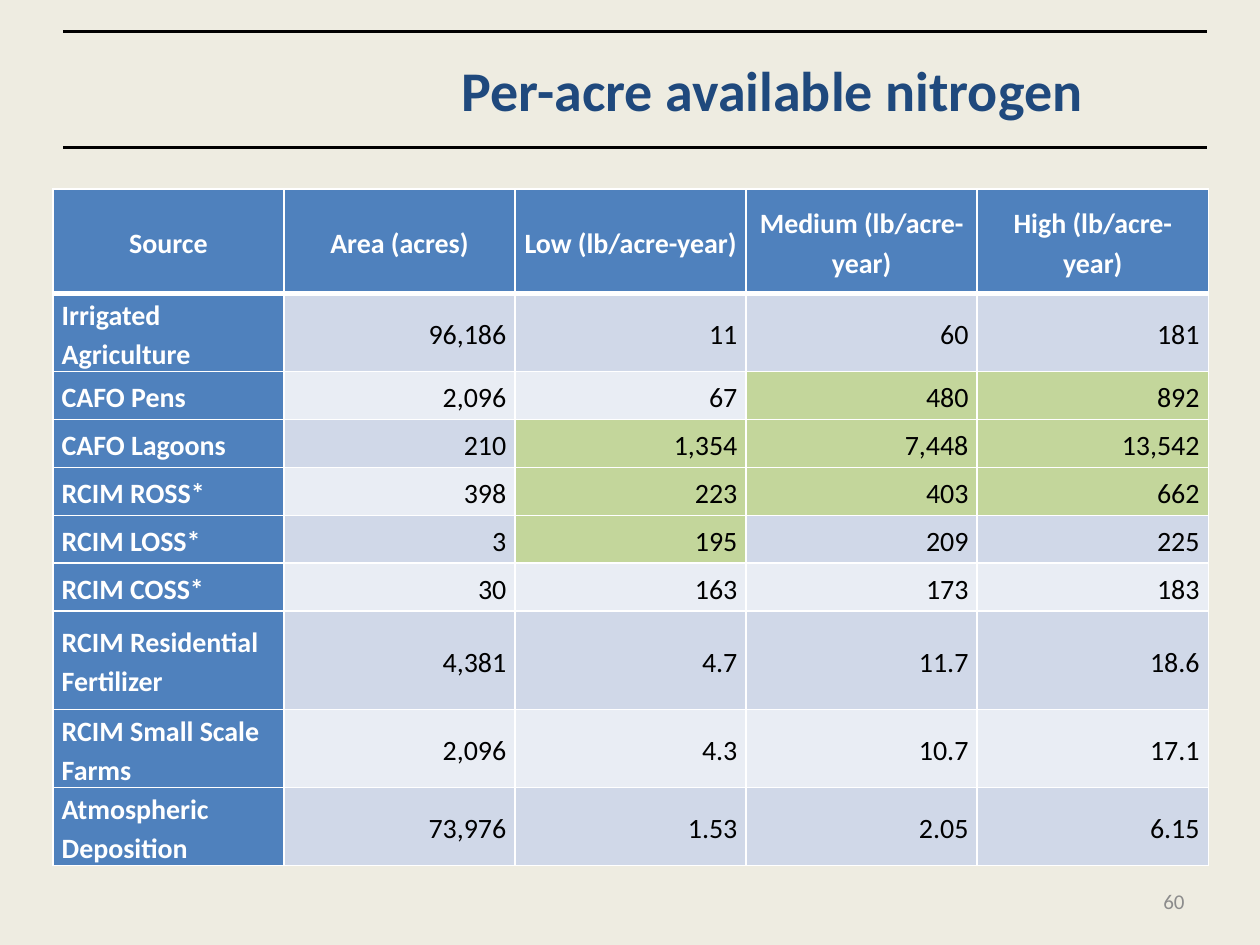
from dataclasses import dataclass

import lxml.etree
import pptx
import pptx.dml.color
import pptx.enum.shapes
import pptx.enum.text
import pptx.oxml.ns
import pptx.util

Inches = pptx.util.Inches
Pt = pptx.util.Pt
Align = pptx.enum.text.PP_ALIGN
Anchor = pptx.enum.text.MSO_ANCHOR
qn = pptx.oxml.ns.qn


@dataclass(frozen=True)
class Theme:
    font: str = "Calibri"
    background: str = "EEECE1"
    title: str = "1F497D"
    number: str = "8C8C8C"
    rule: str = "000000"
    text: str = "000000"
    heading: str = "FFFFFF"
    border: str = "FFFFFF"
    header_fill: str = "4F81BD"
    band_fills: tuple = ("E9EDF4", "D0D8E8")
    highlight: str = "C3D69B"
    title_size: int = 32
    table_size: int = 16
    number_size: int = 12


THEME = Theme()
HEADERS = ("Source", "Area (acres)", "Low (lb/acre-year)",
           "Medium (lb/acre-year)", "High (lb/acre-year)")
SOURCES = (
    ("Irrigated Agriculture", "96,186", "11", "60", "181"),
    ("CAFO Pens", "2,096", "67", "480", "892"),
    ("CAFO Lagoons", "210", "1,354", "7,448", "13,542"),
    ("RCIM ROSS*", "398", "223", "403", "662"),
    ("RCIM LOSS*", "3", "195", "209", "225"),
    ("RCIM COSS*", "30", "163", "173", "183"),
    ("RCIM Residential Fertilizer", "4,381", "4.7", "11.7", "18.6"),
    ("RCIM Small Scale Farms", "2,096", "4.3", "10.7", "17.1"),
    ("Atmospheric Deposition", "73,976", "1.53", "2.05", "6.15"),
)
HIGHLIGHTED_COLUMNS = {2: (3, 4), 3: (2, 3, 4), 4: (2, 3, 4), 5: (2,)}
ROW_HEIGHTS = (0.83, 0.62, 0.38, 0.38, 0.38, 0.38, 0.38, 0.78, 0.62, 0.62)


def color(value):
    return pptx.dml.color.RGBColor.from_string(value)


def set_attributes(target, values):
    for name, value in values.items():
        setattr(target, name, value)


def write_text(text_frame, text, size, text_color, alignment, bold=False, line_spacing=None):
    text_frame.text = text
    text_frame.word_wrap = True
    paragraph = text_frame.paragraphs[0]
    set_attributes(paragraph, {"alignment": alignment, "line_spacing": line_spacing})
    font = paragraph.runs[0].font
    set_attributes(font, {"name": THEME.font, "size": Pt(size), "bold": bold})
    font.color.rgb = color(text_color)


def add_title(slide, text):
    title = slide.shapes.title
    set_attributes(title, {"left": Inches(2.67), "top": Inches(0.25),
                           "width": Inches(6.92), "height": Inches(0.92)})
    title.text_frame.vertical_anchor = Anchor.MIDDLE
    write_text(title.text_frame, text, THEME.title_size, THEME.title, Align.CENTER, bold=True)


def add_rule(slide, top):
    rule = slide.shapes.add_connector(
        pptx.enum.shapes.MSO_CONNECTOR.STRAIGHT,
        Inches(0.5), Inches(top), Inches(9.58), Inches(top))
    rule.line.color.rgb = color(THEME.rule)
    rule.line.width = Pt(2)
    lxml.etree.SubElement(rule._element.spPr, qn("a:effectLst"))


def add_slide_number(slide, text):
    box = slide.shapes.add_textbox(Inches(7.17), Inches(6.95), Inches(2.33), Inches(0.4))
    box.text_frame.vertical_anchor = Anchor.MIDDLE
    write_text(box.text_frame, text, THEME.number_size, THEME.number, Align.RIGHT)


def set_borders(cell, bottom_width):
    properties = cell._tc.get_or_add_tcPr()
    for side, width in {"L": 1, "R": 1, "T": 1, "B": bottom_width}.items():
        line = lxml.etree.SubElement(properties, qn(f"a:ln{side}"), w=str(Pt(width)))
        fill = lxml.etree.SubElement(line, qn("a:solidFill"))
        lxml.etree.SubElement(fill, qn("a:srgbClr"), val=THEME.border)


def cell_fill(row, column):
    if row == 0 or column == 0:
        return THEME.header_fill
    if column in HIGHLIGHTED_COLUMNS.get(row, ()):
        return THEME.highlight
    return THEME.band_fills[row % 2]


def format_cell(cell, text, row, column):
    is_heading = row == 0 or column == 0
    if row == 0:
        alignment = Align.CENTER
    else:
        alignment = Align.LEFT if column == 0 else Align.RIGHT
    set_attributes(cell, {"margin_left": Inches(0.07), "margin_right": Inches(0.07),
                          "margin_top": 0, "margin_bottom": 0,
                          "vertical_anchor": Anchor.MIDDLE})
    write_text(cell.text_frame, text, THEME.table_size,
               THEME.heading if is_heading else THEME.text,
               alignment, bold=is_heading, line_spacing=1.15)
    set_borders(cell, bottom_width=3 if row == 0 else 1)
    cell.fill.solid()
    cell.fill.fore_color.rgb = color(cell_fill(row, column))


def add_nitrogen_table(slide):
    rows = (HEADERS, *SOURCES)
    width = Inches(9.17)
    frame = slide.shapes.add_table(len(rows), len(HEADERS), Inches(0.42), Inches(1.5),
                                   width, Inches(sum(ROW_HEIGHTS)))
    table = frame.table
    for column in table.columns:
        column.width = width // len(HEADERS)
    for row, (values, height) in enumerate(zip(rows, ROW_HEIGHTS)):
        table.rows[row].height = Inches(height)
        for column, text in enumerate(values):
            format_cell(table.cell(row, column), text, row, column)


def main():
    presentation = pptx.Presentation()
    set_attributes(presentation, {"slide_width": Inches(10), "slide_height": Inches(7.5)})
    slide = presentation.slides.add_slide(presentation.slide_layouts.get_by_name("Title Only"))
    slide.background.fill.solid()
    slide.background.fill.fore_color.rgb = color(THEME.background)
    for top in (1.17, 0.25):
        add_rule(slide, top)
    add_title(slide, "Per-acre available nitrogen")
    add_slide_number(slide, "60")
    add_nitrogen_table(slide)
    presentation.save("out.pptx")


if __name__ == "__main__":
    main()
